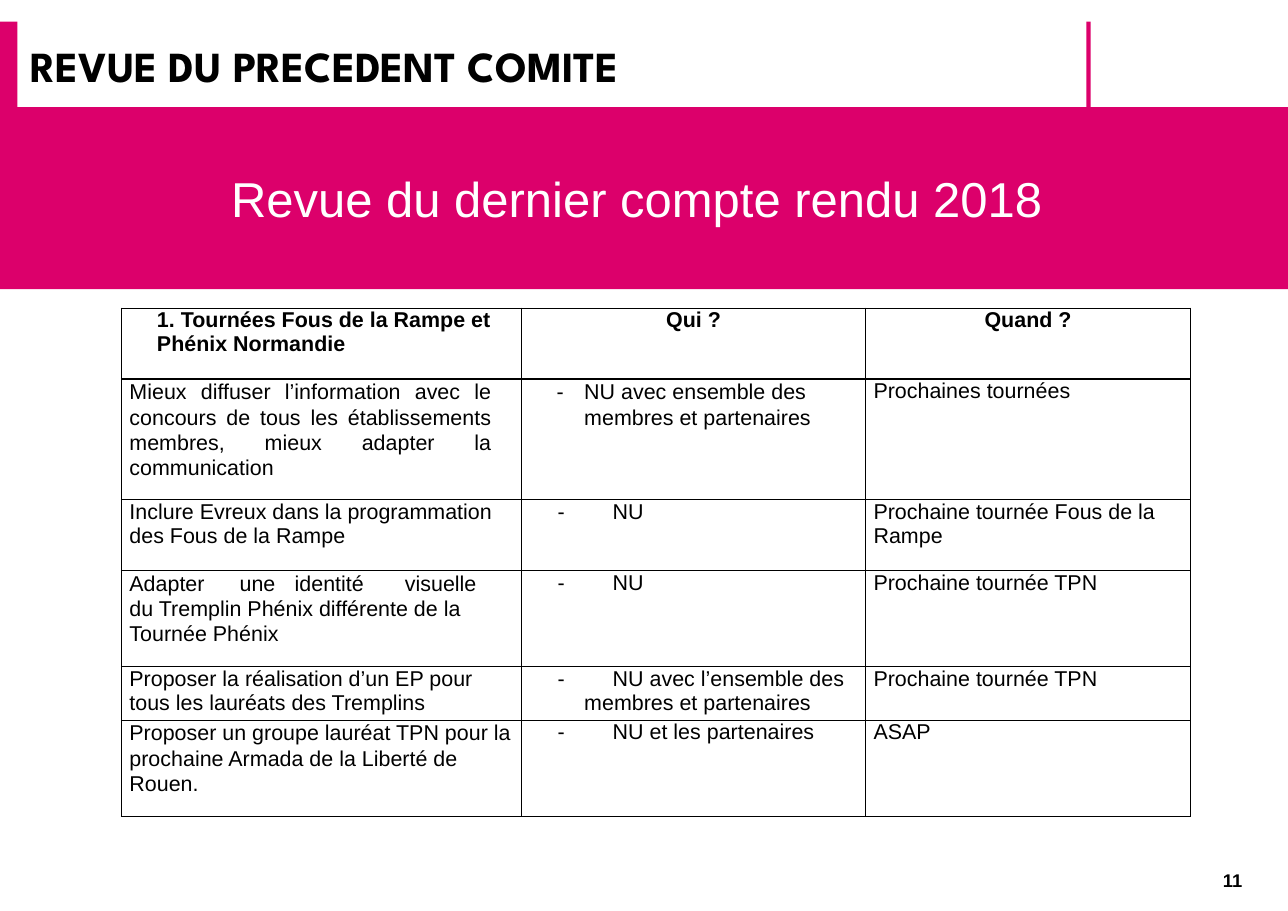
from lxml import etree
from pptx import Presentation
from pptx.dml.color import RGBColor
from pptx.enum.shapes import MSO_SHAPE
from pptx.enum.text import MSO_ANCHOR, MSO_AUTO_SIZE, PP_ALIGN
from pptx.oxml import parse_xml
from pptx.oxml.ns import nsdecls
from pptx.util import Pt

RECTANGLE = MSO_SHAPE.RECTANGLE
MIDDLE = MSO_ANCHOR.MIDDLE
NO_AUTOFIT = MSO_AUTO_SIZE.NONE
LEFT, CENTER, JUSTIFY = PP_ALIGN.LEFT, PP_ALIGN.CENTER, PP_ALIGN.JUSTIFY


class Theme:
    pink = RGBColor(0xDC, 0x00, 0x6B)
    black = RGBColor(0, 0, 0)
    white = RGBColor(255, 255, 255)
    heading_font = "League Spartan"
    body_font = "Arial"
    title_size = Pt(28)
    banner_size = Pt(32)
    table_size = Pt(14)
    number_size = Pt(12)


def set_font(paragraph, size, color, bold=False, name=Theme.body_font):
    font = paragraph.font
    font.name, font.size, font.bold = name, size, bold
    font.color.rgb = color


def add_block(left, top, width, height):
    block = slide.shapes.add_shape(RECTANGLE, Pt(left), Pt(top), Pt(width), Pt(height))
    block.shadow.inherit = False
    block.fill.solid()
    block.fill.fore_color.rgb = Theme.pink
    block.line.fill.background()
    return block


prs = Presentation()
prs.slide_width, prs.slide_height = Pt(841.7), Pt(595.4)
slide = prs.slides.add_slide(prs.slide_layouts[5])

add_block(0, 14.2, 11.3, 57)
add_block(710, 14.2, 2.8, 57)

title = slide.shapes.title
title.left, title.top, title.width, title.height = Pt(20), Pt(14.2), Pt(634), Pt(56.4)
heading = title.text_frame
heading.text = "REVUE DU PRECEDENT COMITE"
heading.auto_size = NO_AUTOFIT
heading.vertical_anchor = MIDDLE
heading.margin_left = heading.margin_right = heading.margin_top = heading.margin_bottom = 0
heading.paragraphs[0].alignment = LEFT
set_font(heading.paragraphs[0], Theme.title_size, Theme.black, True, Theme.heading_font)

page_number = slide.shapes.add_textbox(Pt(778), Pt(564.5), Pt(55), Pt(22)).text_frame
page_number.text = "11"
page_number.word_wrap = True
page_number.vertical_anchor = MIDDLE
page_number.paragraphs[0].alignment = CENTER
set_font(page_number.paragraphs[0], Theme.number_size, Theme.black, True)

banner = add_block(0, 70, 841.7, 119).text_frame
banner.text = "Revue du dernier compte rendu 2018 "
banner.vertical_anchor = MIDDLE
banner.paragraphs[0].alignment = CENTER
set_font(banner.paragraphs[0], Theme.banner_size, Theme.white)

column_widths = [261.4, 224.9, 212.4]
row_heights = [46.4, 78.8, 46.4, 62.8, 35, 62.8]
text_indent, dash_indent, hanging_indent, header_indent = 5.2, 23.6, 41, 23.2
right_margin = 19.6
loose, tight = 1.05, 0.96

#_ROWS_
follow_up = [
    [
        [dict(text="1. Tournées Fous de la Rampe et Phénix Normandie", left=header_indent)],
        [dict(text="Qui ?", left=0, align=CENTER)],
        [dict(text="Quand ?", left=0, align=CENTER)],
    ],
    [
        [dict(text="Mieux diffuser l’information avec le concours de tous les établissements "
                   "membres, mieux adapter la communication",
              right=right_margin, align=JUSTIFY, spacing=loose)],
        [dict(text="-\tNU avec ensemble des membres et partenaires",
              left=hanging_indent, first=-18, spacing=loose)],
        [dict(text="Prochaines tournées")],
    ],
    [
        [dict(text="Inclure Evreux dans la programmation des Fous de la Rampe")],
        [dict(text="-\tNU", left=dash_indent)],
        [dict(text="Prochaine tournée Fous de la"),
         dict(text="Rampe", spacing=tight, before=0.8)],
    ],
    [
        [dict(text="Adapter\tune\tidentité\tvisuelle\tdu Tremplin Phénix différente "
                   "de la Tournée Phénix", right=right_margin, spacing=loose)],
        [dict(text="-\tNU", left=dash_indent)],
        [dict(text="Prochaine tournée TPN")],
    ],
    [
        [dict(text="Proposer la réalisation d’un EP pour"),
         dict(text="tous les lauréats des Tremplins", spacing=tight, before=0.8)],
        [dict(text="-\tNU avec l’ensemble des", left=dash_indent),
         dict(text="membres et partenaires", left=hanging_indent, spacing=tight, before=0.8)],
        [dict(text="Prochaine tournée TPN")],
    ],
    [
        [dict(text="Proposer un groupe lauréat TPN pour la prochaine Armada de la Liberté "
                   "de Rouen.", spacing=loose)],
        [dict(text="-\tNU et les partenaires", left=dash_indent)],
        [dict(text="ASAP")],
    ],
]

table = slide.shapes.add_table(
    len(row_heights), len(column_widths), Pt(79.4), Pt(201.4),
    Pt(sum(column_widths)), Pt(sum(row_heights))).table
table.first_row = table.horz_banding = False
for column, width in zip(table.columns, column_widths):
    column.width = Pt(width)

for row_index, (row, height, entries) in enumerate(zip(table.rows, row_heights, follow_up)):
    row.height = Pt(height)
    for cell, lines in zip(row.cells, entries):
        cell.margin_left = cell.margin_right = cell.margin_top = cell.margin_bottom = 0
        cell_properties = cell._tc.get_or_add_tcPr()
        for side in ("lnL", "lnR", "lnT", "lnB"):
            border = parse_xml(f'<a:{side} {nsdecls("a")} w="{Pt(1)}"/>')
            border_fill = etree.SubElement(border, border.tag.replace(side, "solidFill"))
            etree.SubElement(border_fill, border.tag.replace(side, "srgbClr"), val=str(Theme.black))
            cell_properties.append(border)
        cell.fill.solid()
        cell.fill.fore_color.rgb = Theme.white
        cell.text = "\n".join(line["text"] for line in lines)
        for paragraph, line in zip(cell.text_frame.paragraphs, lines):
            indents = paragraph._p.get_or_add_pPr()
            indents.set("marL", str(Pt(line.get("left", text_indent))))
            indents.set("marR", str(Pt(line.get("right", 0))))
            indents.set("indent", str(Pt(line.get("first", 0))))
            paragraph.alignment = line.get("align", LEFT)
            paragraph.line_spacing = line.get("spacing", 1.0)
            if "before" in line:
                paragraph.space_before = Pt(line["before"])
            set_font(paragraph, Theme.table_size, Theme.black, row_index == 0)

prs.save("out.pptx")
